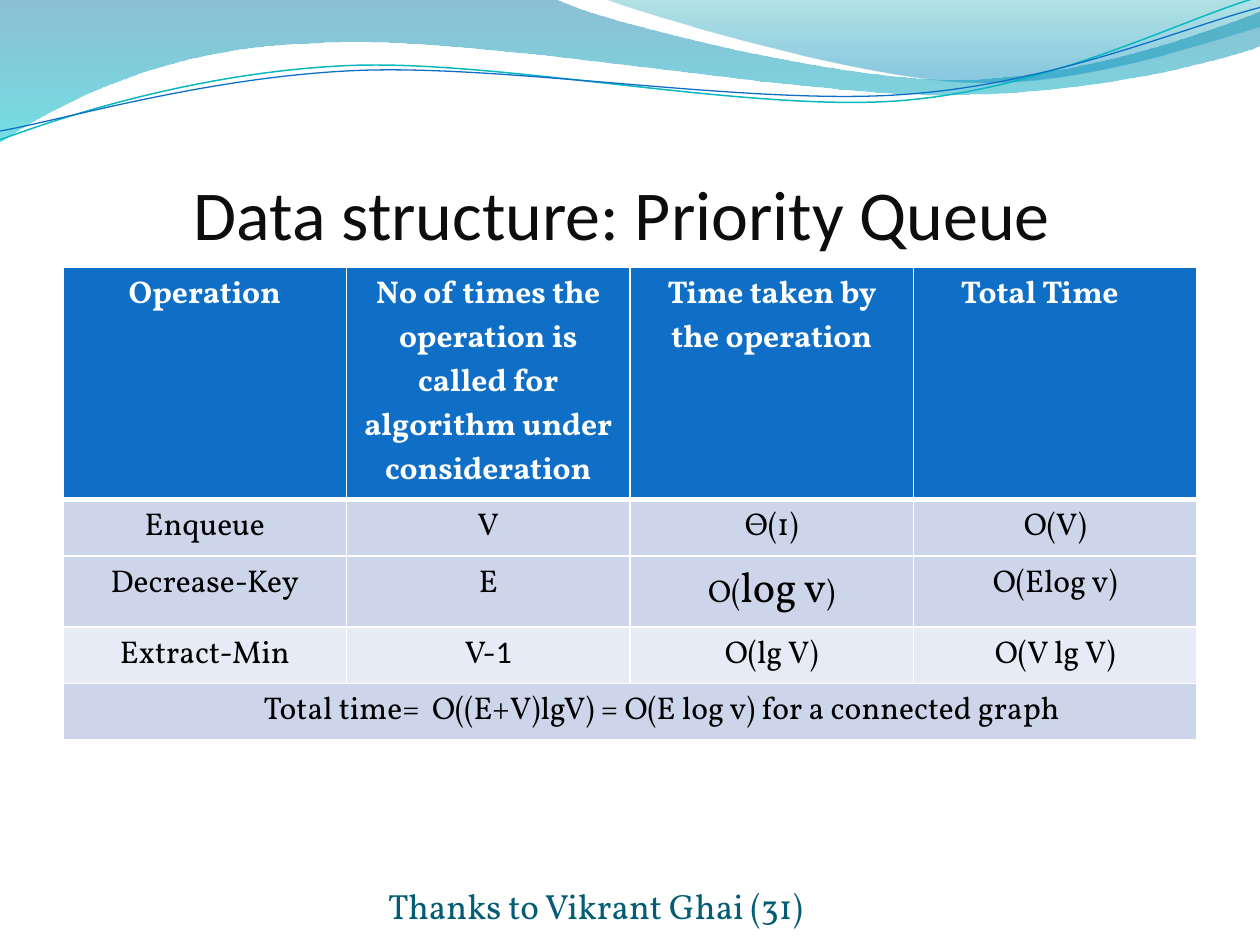
from math import cos, radians, sin

from lxml.etree import SubElement
from pptx import Presentation
from pptx.dml.color import RGBColor
from pptx.enum.text import MSO_ANCHOR, MSO_AUTO_SIZE, PP_ALIGN
from pptx.oxml.ns import qn
from pptx.util import Inches, Pt

WHITE = RGBColor(0xFF, 0xFF, 0xFF)
BLACK = RGBColor(0x00, 0x00, 0x00)
TITLE_INK = RGBColor(0x0D, 0x0D, 0x0D)
FOOTER_INK = RGBColor(0x04, 0x5D, 0x75)
BLUE = RGBColor(0x0F, 0x6F, 0xC6)
TEAL = RGBColor(0x0A, 0xB8, 0xBF)
DEEP_BLUE = RGBColor(0x00, 0x74, 0xA1)
CYAN = RGBColor(0x00, 0xC6, 0xCF)
SEA_GREEN = RGBColor(0x00, 0xA1, 0xA9)
SKY = RGBColor(0x00, 0x8B, 0xBF)
BAND_DARK = RGBColor(0xCC, 0xD5, 0xEA)
BAND_LIGHT = RGBColor(0xE7, 0xEB, 0xF5)
HEADING_FONT, BODY_FONT = "Calibri", "Vollkorn"
GRID_COLUMNS, GRID_ROWS = 10, 7.5
STRAND_TILT = 2.7


def turn(numbers, center, degrees):
    """Turn a flat run of x, y numbers clockwise about a center."""
    cosine, sine = cos(radians(degrees)), sin(radians(degrees))
    turned = []
    for x, y in zip(numbers[::2], numbers[1::2]):
        dx, dy = x - center[0], y - center[1]
        turned += [center[0] + dx * cosine - dy * sine, center[1] + dx * sine + dy * cosine]
    return turned


class SlideBuilder:
    def __init__(self, presentation):
        self.column = presentation.slide_width / GRID_COLUMNS
        self.row = presentation.slide_height / GRID_ROWS
        self.slide = presentation.slides.add_slide(presentation.slide_layouts[5])

    def box(self, left, top, width, height):
        return [round(length * unit) for length, unit in
                zip((left, top, width, height), (self.column, self.row) * 2)]

    def format_runs(self, paragraph, size, color, font=BODY_FONT, bold=False):
        paragraph.alignment = PP_ALIGN.CENTER
        for run in paragraph.runs:
            run.font.size = Pt(size)
            run.font.name = font
            run.font.bold = bold
            run.font.color.rgb = color

    def fill_text(self, shape, area, text, top_inset=0, **style):
        shape.left, shape.top, shape.width, shape.height = self.box(*area)
        frame = shape.text_frame
        frame.text = text
        frame.word_wrap = True
        frame.auto_size = MSO_AUTO_SIZE.NONE
        frame.vertical_anchor = MSO_ANCHOR.BOTTOM
        frame.margin_left = frame.margin_right = frame.margin_bottom = 0
        frame.margin_top = Inches(top_inset)
        self.format_runs(frame.paragraphs[0], **style)

    def title(self, area, text, **style):
        self.fill_text(self.slide.shapes.title, area, text, top_inset=0.05, **style)

    def label(self, area, text, **style):
        self.fill_text(self.slide.shapes.add_textbox(*self.box(*area)), area, text, **style)

    def outline(self, start, segments, close):
        """Draw segments of two numbers as lines and of six as cubic curves."""
        numbers = [number for segment in [start, *segments] for number in segment]
        points = [(x * self.column, y * self.row) for x, y in zip(numbers[::2], numbers[1::2])]
        builder = self.slide.shapes.build_freeform(*points[0])
        builder.add_line_segments(points[1:], close=close)
        shape = builder.convert_to_shape()
        shape.shadow.inherit = False
        lines = iter(list(shape._element.spPr.iter(qn("a:lnTo"))))
        for segment in segments:
            first = next(lines)
            if len(segment) == 6:
                first.tag = qn("a:cubicBezTo")
                for extra in (next(lines), next(lines)):
                    first.append(extra[0])
                    extra.getparent().remove(extra)
        return shape

    def wave(self, start, segments, stops):
        shape = self.outline(start, segments, close=True)
        shape.line.fill.background()
        shape.fill.gradient()
        shape.fill.gradient_angle = 270
        for stop, (position, color, _) in zip(shape.fill.gradient_stops, stops):
            stop.position = position
            stop.color.rgb = color
        colors = shape._element.spPr.iter(qn("a:srgbClr"))
        for element, (_, _, opacity) in zip(colors, stops):
            SubElement(element, qn("a:alpha"), val=str(opacity * 1000))

    def strand(self, center, start, segments, color, width):
        level = [turn(segment, center, STRAND_TILT) for segment in [start, *segments]]
        shape = self.outline(level[0], level[1:], close=False)
        shape.rotation = -STRAND_TILT
        shape.fill.background()
        shape.line.color.rgb = color
        shape.line.width = Pt(width)

    def paint_cell(self, cell, fill, top=1, bottom=1):
        properties = cell._tc.get_or_add_tcPr()
        for side, width in (("L", 1), ("R", 1), ("T", top), ("B", bottom)):
            line = SubElement(properties, qn(f"a:ln{side}"), w=str(Pt(width)))
            solid = SubElement(line, qn("a:solidFill"))
            SubElement(solid, qn("a:srgbClr"), val=str(WHITE))
        cell.fill.solid()
        cell.fill.fore_color.rgb = fill

    def table(self, area, row_height, rows, fills):
        frame = self.slide.shapes.add_table(len(rows), len(rows[0]), *self.box(*area))
        table = frame.table
        for r, (texts, fill) in enumerate(zip(rows, fills)):
            table.rows[r].height = round(row_height * self.row)
            for c, text in enumerate(texts):
                cell = table.cell(r, c)
                self.paint_cell(cell, fill, top=3 if r == 1 else 1, bottom=3 if r == 0 else 1)
                paragraph = cell.text_frame.paragraphs[0]
                for part in [text] if isinstance(text, str) else text:
                    if part:
                        paragraph.add_run().text = part
                self.format_runs(paragraph, 18, BLACK if r else WHITE, bold=r == 0)
        frame.height = self.box(*area)[3]
        return table


def main():
    presentation = Presentation()
    presentation.slide_width, presentation.slide_height = Inches(10), Inches(7.5)
    builder = SlideBuilder(presentation)

    # Waves across the top
    builder.wave((0, 0), [
        (4.4, -0.01), (4.76, 0.17, 6.64, 0.63, 7.58, 0.63),
        (8.53, 0.63, 9.58, 0.26, 10, 0.09), (10.01, 0.36),
        (9.83, 0.44, 8.7, 0.76, 7.46, 0.75), (6.22, 0.75, 3.82, 0.28, 2.57, 0.34),
        (1.29, 0.36, 0.46, 0.83, -0.01, 1.13),
    ], [(0, DEEP_BLUE, 45), (1, CYAN, 55)])
    builder.wave((4.79, -0.01), [
        (5.09, 0.11, 6.82, 0.62, 7.69, 0.65), (8.56, 0.69, 9.61, 0.32, 10, 0.21), (10, 0),
    ], [(0, SEA_GREEN, 30), (0.8, SKY, 45)])
    builder.strand((4.99, 0.58), (0, 1.11), [
        (0.48, 0.93, 1.58, 0.57, 2.77, 0.52), (3.95, 0.47, 5.93, 0.89, 7.13, 0.8),
        (8.33, 0.71, 9.38, 0.15, 9.98, -0.02),
    ], TEAL, 0.85)
    builder.strand((5, 0.59), (0, 1.04), [
        (0.47, 0.96, 1.64, 0.61, 2.83, 0.56), (4.03, 0.51, 5.97, 0.84, 7.17, 0.75),
        (8.36, 0.67, 9.41, 0.21, 10, 0.06),
    ], BLUE, 0.75)

    # Title
    builder.title((0.5, 0.77, 9, 1.25), "Data structure: Priority Queue ",
                  size=40, color=TITLE_INK, font=HEADING_FONT)

    # Running times of the queue operations; rows grow to fit their text
    table = builder.table((0.5, 2.12, 9, 3.32), 0.41, [
        ["Operation", "No of times the operation is called for algorithm under consideration",
         "Time taken by the operation", "Total Time"],
        ["Enqueue", "V", "Θ(1)", "O(V)"],
        ["Decrease-Key", "E", ("O(", "log v", ")"), "O(Elog v)"],
        ["Extract-Min", ("V-", "1"), "O(lg V)", "O(V lg V)"],
        ["Total time=  O((E+V)lgV) = O(E log v) for a connected graph", "", "", ""],
    ], [BLUE, BAND_DARK, BAND_DARK, BAND_LIGHT, BAND_DARK])
    table.cell(4, 0).merge(table.cell(4, 3))
    table.cell(4, 0).margin_left = Inches(0.6)
    table.cell(0, 3).margin_right = Inches(0.35)
    table.cell(2, 2).text_frame.paragraphs[0].runs[1].font.size = Pt(24)
    table.cell(3, 1).text_frame.paragraphs[0].runs[1].font.name = HEADING_FONT

    # Credit line
    builder.label((2.92, 6.95, 3.67, 0.4), "Thanks to Vikrant Ghai (31) ",
                  size=20, color=FOOTER_INK)

    presentation.save("out.pptx")


if __name__ == "__main__":
    main()
